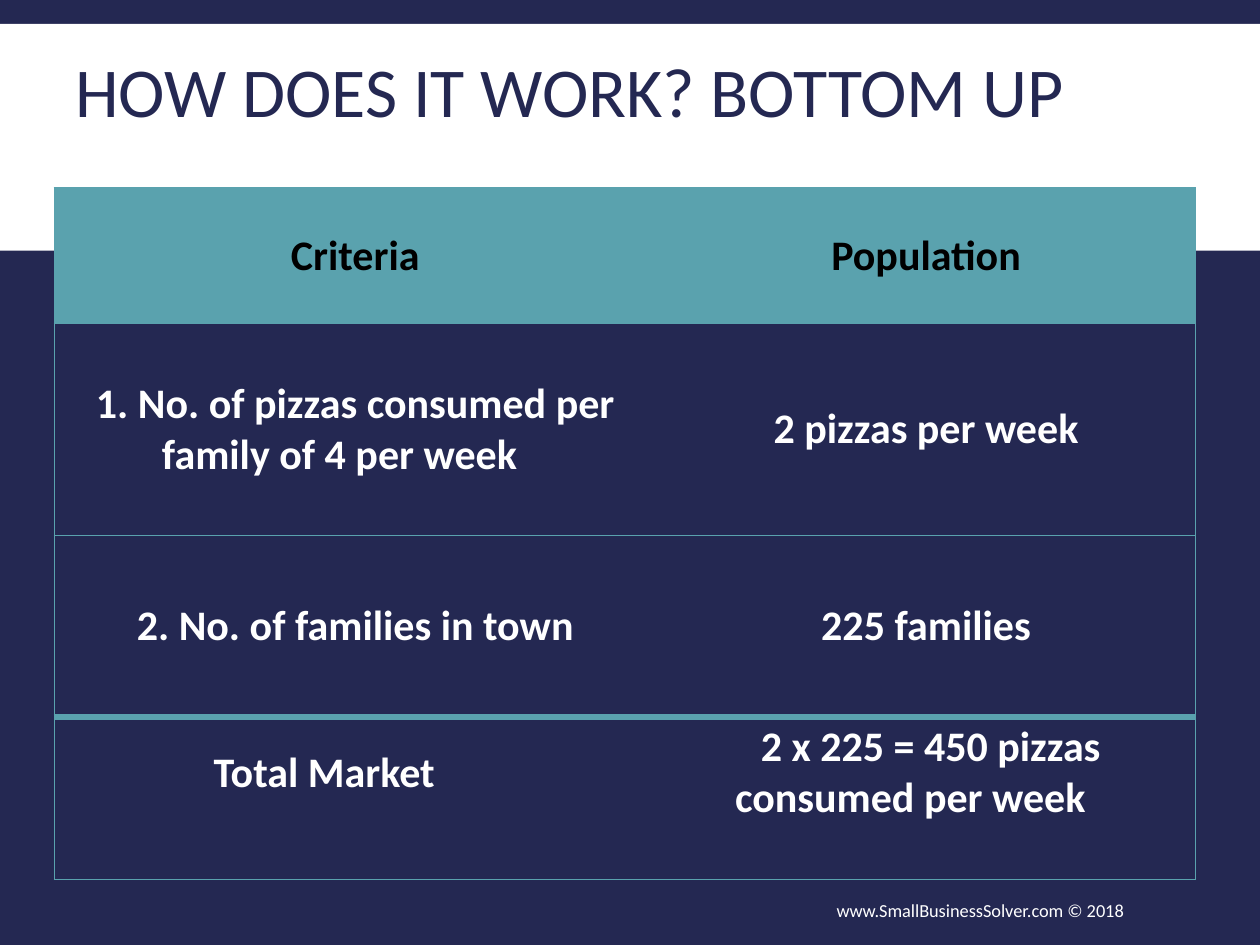
import pptx
import pptx.dml.color
import pptx.enum.shapes
import pptx.enum.text
import pptx.oxml
import pptx.oxml.ns
import pptx.util
from pptx.util import Inches

RGB = pptx.dml.color.RGBColor.from_string
ALIGN = pptx.enum.text.PP_ALIGN
MIDDLE = pptx.enum.text.MSO_ANCHOR.MIDDLE

THEME = {
    "font": "Calibri",
    "navy": "242852", "teal": "5AA2AE", "white": "FFFFFF", "black": "000000",
    "title": 40, "table": 24, "footer": 10.5,
    "thin": 0.75, "thick": 4,
}


def write_text(frame, text, size, color, alignment, bold=False):
    frame.word_wrap = True
    paragraph = frame.paragraphs[0]
    paragraph.alignment = alignment
    run = paragraph.add_run()
    run.text = text
    formats = {"name": THEME["font"], "size": pptx.util.Pt(THEME[size]), "bold": bold}
    for attribute, value in formats.items():
        setattr(run.font, attribute, value)
    run.font.color.rgb = RGB(THEME[color])
    return paragraph


def set_borders(cell, widths):
    """Draw the edges L, R, T, B in points; a width of 0 hides the edge."""
    properties = cell._tc.get_or_add_tcPr()
    for position, (edge, width) in enumerate(widths.items()):
        paint = (f'<a:solidFill><a:srgbClr val="{THEME["teal"]}"/></a:solidFill>'
                 if width else "<a:noFill/>")
        properties.insert(position, pptx.oxml.parse_xml(
            f'<a:ln{edge} {pptx.oxml.ns.nsdecls("a")} w="{int(width * 12700)}">'
            f"{paint}</a:ln{edge}>"))


presentation = pptx.Presentation()
presentation.slide_width, presentation.slide_height = Inches(10), Inches(7.5)
slide = presentation.slides.add_slide(presentation.slide_layouts[6])
slide.background.fill.solid()
slide.background.fill.fore_color.rgb = RGB(THEME["navy"])

# Title on its white band
band = slide.shapes.add_shape(pptx.enum.shapes.MSO_SHAPE.RECTANGLE,
                              0, Inches(0.19), Inches(10), Inches(1.8))
band.shadow.inherit = False
band.fill.solid()
band.fill.fore_color.rgb = RGB(THEME["white"])
band.line.fill.background()

title = slide.shapes.add_textbox(Inches(0.5), Inches(0.14), Inches(9), Inches(1.25))
title.text_frame.vertical_anchor = MIDDLE
heading = write_text(title.text_frame, "HOW DOES IT WORK? BOTTOM UP",
                     "title", "navy", ALIGN.LEFT)
heading.line_spacing = 0.85

# Market table
rows = [
    ("Criteria", "Population"),
    ("1. No. of pizzas consumed per family of 4 per week", "2 pizzas per week"),
    ("2. No. of families in town", "225 families"),
    ("Total Market\t", " 2 x 225 = 450 pizzas consumed per week"),
]
row_heights = [1.08, 1.68, 1.44, 1.29]
rules = [THEME["thin"], THEME["thin"], THEME["thin"], THEME["thick"], THEME["thin"]]
last_row = len(rows) - 1

table = slide.shapes.add_table(len(rows), 2, Inches(0.43), Inches(1.49),
                               Inches(9.06), Inches(sum(row_heights))).table
table.horz_banding = False
for row_index, (texts, height) in enumerate(zip(rows, row_heights)):
    table.rows[row_index].height = Inches(height)
    for column_index, text in enumerate(texts):
        cell = table.cell(row_index, column_index)
        margins = {
            "margin_left": 0.07, "margin_right": 0.07, "margin_top": 0,
            "margin_bottom": 0.4 if row_index == last_row else 0,
        }
        for attribute, value in margins.items():
            setattr(cell, attribute, Inches(value))
        cell.vertical_anchor = MIDDLE
        if row_index == 0:
            cell.fill.solid()
            cell.fill.fore_color.rgb = RGB(THEME["teal"])
        else:
            cell.fill.background()
        set_borders(cell, {
            "L": THEME["thin"] if column_index == 0 else 0,
            "R": THEME["thin"] if column_index == 1 else 0,
            "T": rules[row_index], "B": rules[row_index + 1],
        })
        paragraph = write_text(cell.text_frame, text, "table",
                               "white" if row_index else "black", ALIGN.CENTER, True)
        paragraph._p.get_or_add_pPr().set("indent", str(Inches(0.25)))

# Footer
footer = slide.shapes.add_textbox(Inches(4.58), Inches(7.02), Inches(4.44), Inches(0.4))
footer.text_frame.vertical_anchor = MIDDLE
write_text(footer.text_frame, "www.SmallBusinessSolver.com © 2018",
           "footer", "white", ALIGN.RIGHT)

presentation.save("out.pptx")
